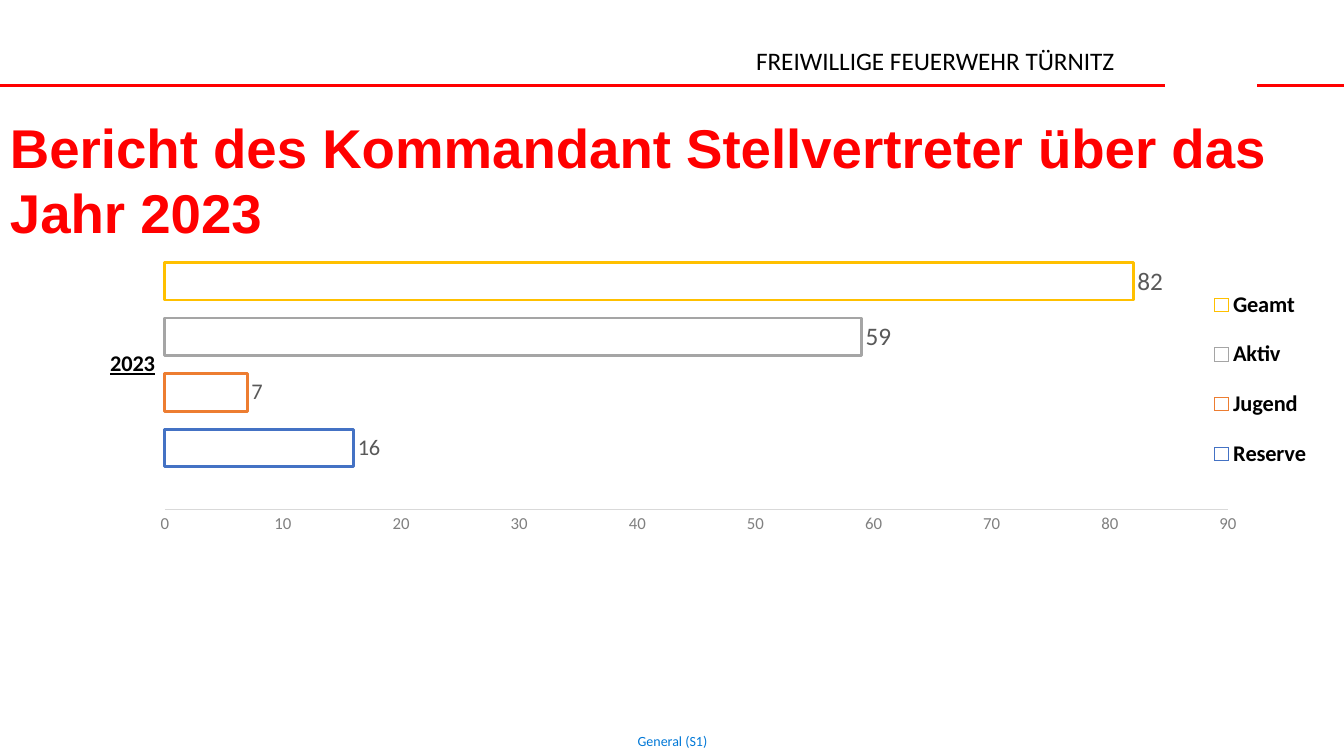
import dataclasses

import pptx
import pptx.chart.data
import pptx.dml.color
import pptx.enum.chart
import pptx.enum.shapes
import pptx.enum.text
import pptx.oxml
import pptx.oxml.ns
import pptx.util

Inches = pptx.util.Inches
Pt = pptx.util.Pt
qn = pptx.oxml.ns.qn


@dataclasses.dataclass(frozen=True)
class Theme:
    red: str = "FF0000"
    black: str = "000000"
    footer_blue: str = "0078D7"
    axis_text: str = "808080"
    axis_line: str = "D9D9D9"
    label_text: str = "595959"
    heading_font: str = "Arial"
    body_font: str = "Calibri"
    title_size: int = 39
    header_size: int = 18
    footer_size: int = 10
    legend_size: int = 16
    axis_size: int = 12


theme = Theme()


def style_font(font, name, size, color, bold=False):
    font.name = name
    font.size = Pt(size)
    font.bold = bold
    font.color.rgb = pptx.dml.color.RGBColor.from_string(color)


def place_manually(parent, index, left, top, width, height, inner=False):
    for layout in parent.findall(qn("c:layout")):
        parent.remove(layout)
    target = '<c:layoutTarget val="inner"/>' if inner else ""
    parent.insert(index, pptx.oxml.parse_xml(
        f'<c:layout {pptx.oxml.ns.nsdecls("c")}><c:manualLayout>{target}'
        '<c:xMode val="edge"/><c:yMode val="edge"/>'
        f'<c:x val="{left}"/><c:y val="{top}"/>'
        f'<c:w val="{width}"/><c:h val="{height}"/>'
        '</c:manualLayout></c:layout>'))


presentation = pptx.Presentation()
presentation.slide_width = Inches(13.33)
presentation.slide_height = Inches(7.5)
slide = presentation.slides.add_slide(presentation.slide_layouts[6])

for start, end in [(11.55, 0), (13.33, 12.47)]:
    rule = slide.shapes.add_connector(
        pptx.enum.shapes.MSO_CONNECTOR.STRAIGHT,
        Inches(start), Inches(0.85), Inches(end), Inches(0.85))
    rule.line.color.rgb = pptx.dml.color.RGBColor.from_string(theme.red)
    rule.line.width = Pt(2.25)
    rule._element.spPr.append(
        pptx.oxml.parse_xml(f'<a:effectLst {pptx.oxml.ns.nsdecls("a")}/>'))

texts = [
    ("FREIWILLIGE FEUERWEHR TÜRNITZ", (7.4, 0.4, 3.79, 0.4),
     theme.body_font, theme.header_size, theme.black, False),
    ("General (S1)", (6.17, 7.21, 1, 0.29),
     theme.body_font, theme.footer_size, theme.footer_blue, False),
    ("Bericht des Kommandant Stellvertreter über das Jahr 2023", (0, 1.08, 13.33, 0.76),
     theme.heading_font, theme.title_size, theme.red, True),
]
frames = []
for text, box, font_name, size, color, bold in texts:
    frame = slide.shapes.add_textbox(*map(Inches, box)).text_frame
    frame.word_wrap = True
    frame.text = text
    style_font(frame.paragraphs[0].font, font_name, size, color, bold)
    frames.append(frame)

header, footer, title = frames
header.word_wrap = False
footer.margin_left = footer.margin_right = footer.margin_top = footer.margin_bottom = 0
footer.vertical_anchor = pptx.enum.text.MSO_ANCHOR.MIDDLE
footer.paragraphs[0].alignment = pptx.enum.text.PP_ALIGN.CENTER

members = [
    ("Reserve", 16, "4472C4", 16),
    ("Jugend", 7, "ED7D31", 16),
    ("Aktiv", 59, "A5A5A5", 18),
    ("Geamt", 82, "FFC000", 18),
]
chart_data = pptx.chart.data.CategoryChartData()
chart_data.categories = ["2023"]
for name, count, color, label_size in members:
    chart_data.add_series(name, [count])

chart = slide.shapes.add_chart(
    pptx.enum.chart.XL_CHART_TYPE.BAR_CLUSTERED,
    Inches(0.22), Inches(1.84), Inches(12.86), Inches(4.87), chart_data).chart
style_font(chart.font, theme.body_font, theme.footer_size, theme.black)
chart.has_title = False

plot = chart.plots[0]
plot.gap_width = 227
plot.overlap = -48
plot.vary_by_categories = False
for series, (name, count, color, label_size) in zip(plot.series, members):
    series.format.fill.background()
    series.format.line.color.rgb = pptx.dml.color.RGBColor.from_string(color)
    series.format.line.width = Pt(2)
    labels = series.data_labels
    labels.show_value = True
    labels.position = pptx.enum.chart.XL_LABEL_POSITION.OUTSIDE_END
    style_font(labels.font, theme.body_font, label_size, theme.label_text)

category_axis = chart.category_axis
category_axis.has_major_gridlines = False
category_axis.format.line.fill.background()
style_font(category_axis.tick_labels.font, theme.body_font, theme.legend_size, theme.black, True)
category_axis.tick_labels.font.underline = True

value_axis = chart.value_axis
value_axis.has_major_gridlines = False
value_axis.minimum_scale = 0
value_axis.maximum_scale = 90
value_axis.major_unit = 10
value_axis.major_tick_mark = pptx.enum.chart.XL_TICK_MARK.NONE
value_axis.format.line.color.rgb = pptx.dml.color.RGBColor.from_string(theme.axis_line)
value_axis.format.line.width = Pt(0.75)
style_font(value_axis.tick_labels.font, theme.body_font, theme.axis_size, theme.axis_text)

chart.has_legend = True
legend = chart.legend
legend.position = pptx.enum.chart.XL_LEGEND_POSITION.TOP
legend.include_in_layout = False
style_font(legend.font, theme.body_font, theme.legend_size, theme.black, True)

place_manually(chart._chartSpace.chart.plotArea, 0, 0.11, 0.07, 0.82, 0.59, inner=True)
place_manually(legend._element, 1, 0.91, 0.17, 0.09, 0.45)

presentation.save("out.pptx")
